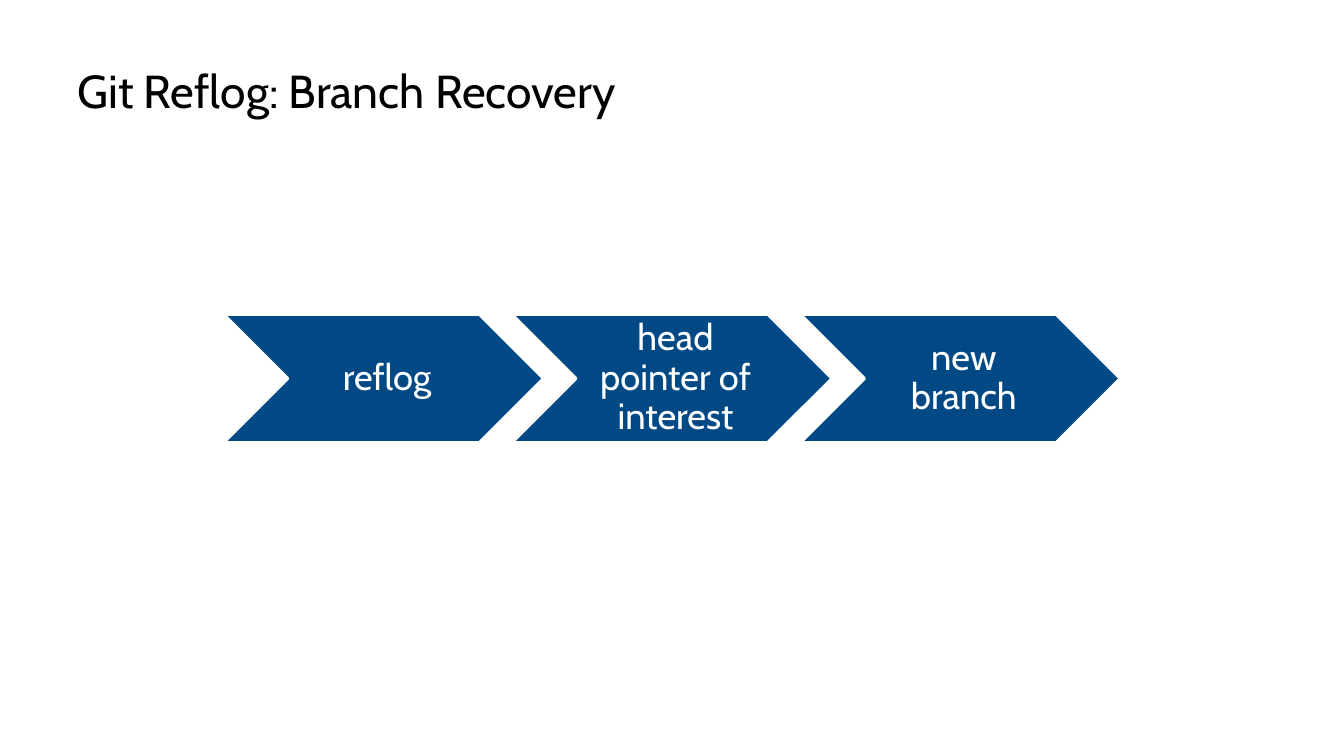
"""Build the Git reflog branch recovery slide."""
from pptx import Presentation
from pptx.dml.color import RGBColor
from pptx.enum.shapes import MSO_SHAPE
from pptx.enum.text import MSO_ANCHOR, PP_ALIGN
from pptx.util import Inches, Pt

COLORS = {"black": "000000", "blue": "004985", "white": "FFFFFF"}
STEPS = ["reflog", "head pointer of interest", "new branch"]
STEP_LEFT, STEP_TOP, STEP_PITCH = 2.22, 3.12, 2.86
STEP_WIDTH, STEP_HEIGHT = 3.17, 1.27


class SlideBuilder:
    def __init__(self, prs, font="Cabin"):
        self.font = font
        self.slide = prs.slides.add_slide(prs.slide_layouts[6])

    def color(self, name):
        return RGBColor.from_string(COLORS[name])

    def set_text(self, sp, text, size, color, align):
        tf = sp.text_frame
        tf.text = text
        tf.word_wrap = True
        tf.vertical_anchor = MSO_ANCHOR.MIDDLE
        p = tf.paragraphs[0]
        p.alignment = align
        p.line_spacing = 0.9
        r = p.runs[0]
        r.font.name = self.font
        r.font.size = Pt(size)
        r.font.color.rgb = self.color(color)
        return tf

    def title(self, text, left, top, width, height):
        sp = self.slide.shapes.add_textbox(
            Inches(left), Inches(top), Inches(width), Inches(height))
        self.set_text(sp, text, 33, "black", PP_ALIGN.LEFT)

    def chevron(self, text, left, top, width, height):
        sp = self.slide.shapes.add_shape(
            MSO_SHAPE.CHEVRON,
            Inches(left), Inches(top), Inches(width), Inches(height))
        sp.shadow.inherit = False
        sp.fill.solid()
        sp.fill.fore_color.rgb = self.color("blue")
        sp.line.color.rgb = self.color("white")
        sp.line.width = Pt(2)
        tf = self.set_text(sp, text, 26, "white", PP_ALIGN.CENTER)
        tf.margin_left = Inches(0.11)
        tf.margin_top = tf.margin_right = tf.margin_bottom = Inches(0.04)


def main():
    prs = Presentation()
    prs.slide_width = Inches(13.33)
    prs.slide_height = Inches(7.5)
    s = SlideBuilder(prs)
    s.title("Git Reflog: Branch Recovery", 0.67, 0.3, 12.2, 1.25)
    for i, step in enumerate(STEPS):
        s.chevron(step, STEP_LEFT + i * STEP_PITCH, STEP_TOP,
                  STEP_WIDTH, STEP_HEIGHT)
    prs.save("out.pptx")


if __name__ == "__main__":
    main()
